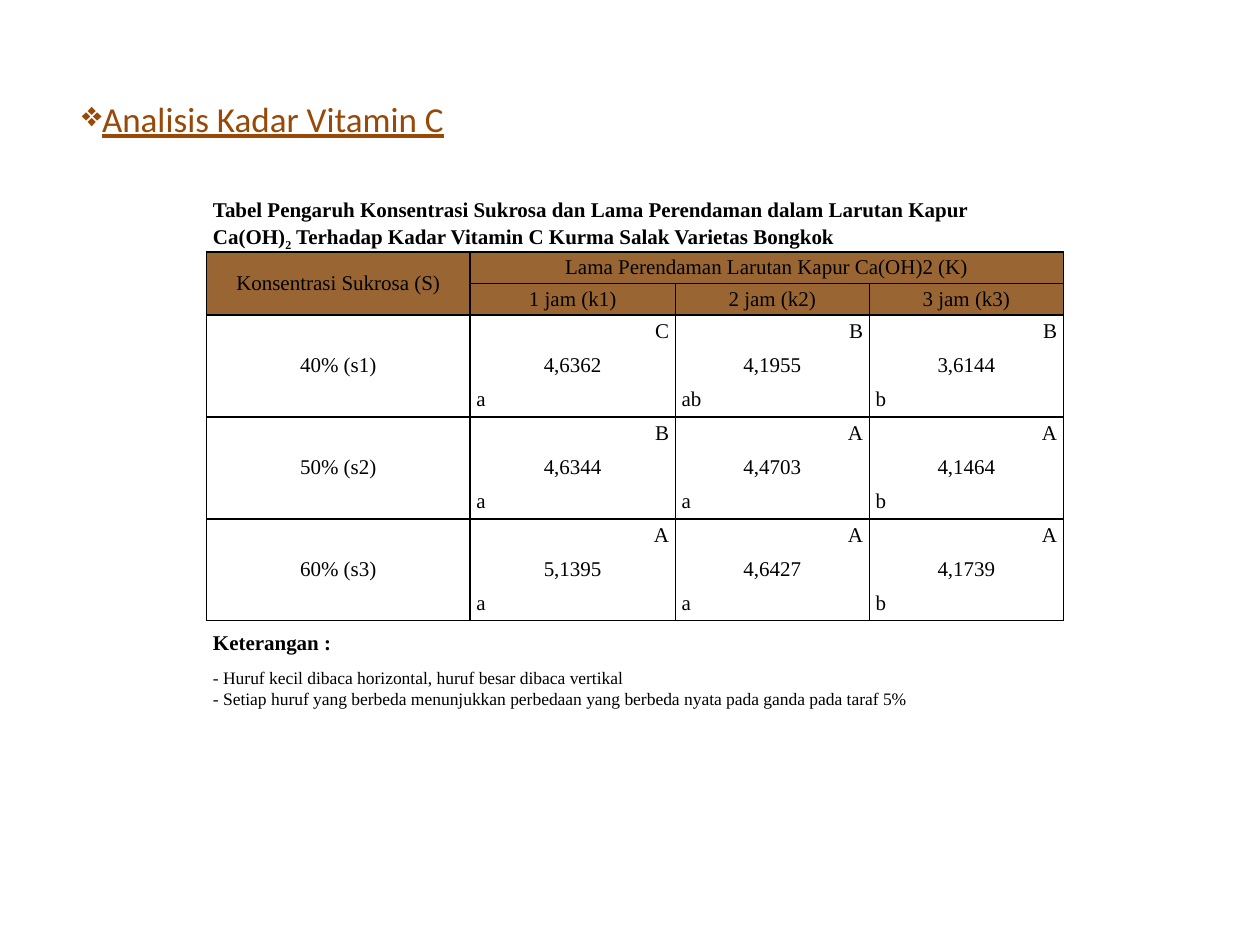
from lxml import etree
from pptx import Presentation
from pptx import util as u
from pptx.dml.color import RGBColor
from pptx.enum import text
from pptx.oxml import ns

COLORS = {"title": "984807", "text": "000000", "header": "996633", "line": "000000"}
SERIF = "Times New Roman"
LEFT, CENTER = text.PP_ALIGN.LEFT, text.PP_ALIGN.CENTER
RIGHT, JUSTIFY = text.PP_ALIGN.RIGHT, text.PP_ALIGN.JUSTIFY
MIDDLE, BOTTOM = text.MSO_ANCHOR.MIDDLE, text.MSO_ANCHOR.BOTTOM
COLUMN_WIDTHS = [2.09, 1.63, 1.54, 1.54]
ROW_HEIGHTS = [0.22] * 2 + [0.25] * 2 + [0.27] * 11 + [0.16]
HOURS = ["1 jam (k1)", "2 jam (k2)", "3 jam (k3)"]
GROUPS = [
    ("40% (s1)", "CBB", ["4,6362", "4,1955", "3,6144"], ["a", "ab", "b"]),
    ("50% (s2)", "BAA", ["4,6344", "4,4703", "4,1464"], ["a", "a", "b"]),
    ("60% (s3)", "AAA", ["5,1395", "4,6427", "4,1739"], ["a", "a", "b"]),
]
NOTES = [
    "- Huruf kecil dibaca horizontal, huruf besar dibaca vertikal",
    "- Setiap huruf yang berbeda menunjukkan perbedaan yang berbeda nyata pada ganda pada taraf 5%",
]


def write(para, words, size=12, font=SERIF, color="text", bold=False,
          underline=False, align=CENTER, baseline=0):
    para.alignment = align
    span = para.add_run()
    span.text = words
    span.font.size = u.Pt(size)
    span.font.name = font
    span.font.bold = bold
    span.font.underline = underline
    span.font.color.rgb = RGBColor.from_string(COLORS[color])
    if baseline:
        span.font._element.set("baseline", str(baseline * 1000))


def add_title(page):
    box = page.shapes.title
    box.left, box.top = u.Inches(0.55), u.Inches(0.63)
    box.width, box.height = u.Inches(8.5), u.Inches(0.62)
    box.text_frame.vertical_anchor = MIDDLE
    para = box.text_frame.paragraphs[0]
    write(para, "Analisis Kadar Vitamin C", size=20, font="Calibri",
          color="title", underline=True, align=LEFT)
    props = para._p.get_or_add_pPr()
    props.set("marL", "0")
    props.set("indent", "0")
    etree.SubElement(props, ns.qn("a:buChar"), char="❖")


def set_borders(cell, sides):
    props = cell._tc.get_or_add_tcPr()
    for side in "LRTB":
        line = etree.SubElement(props, ns.qn(f"a:ln{side}"), w=str(u.Pt(1)))
        if side in sides:
            fill = etree.SubElement(line, ns.qn("a:solidFill"))
            etree.SubElement(fill, ns.qn("a:srgbClr"), val=COLORS["line"])
        else:
            etree.SubElement(line, ns.qn("a:noFill"))


def style_cell(cell, sides="", fill=None, anchor=MIDDLE):
    cell.margin_left = cell.margin_right = u.Inches(0.05)
    cell.margin_top = cell.margin_bottom = 0
    cell.vertical_anchor = anchor
    set_borders(cell, sides)
    if fill:
        cell.fill.solid()
        cell.fill.fore_color.rgb = RGBColor.from_string(COLORS[fill])
    else:
        cell.fill.background()
    para = cell.text_frame.paragraphs[0]
    etree.SubElement(para._p, ns.qn("a:endParaRPr"), sz="1000")


def fill_cell(grid, row, col, words="", rows=1, cols=1, sides="", fill=None,
              anchor=MIDDLE, **style):
    cell = grid.cell(row, col)
    for r in range(row, row + rows):
        for c in range(col, col + cols):
            style_cell(grid.cell(r, c), sides, fill, anchor)
    if rows * cols > 1:
        cell.merge(grid.cell(row + rows - 1, col + cols - 1))
    para = cell.text_frame.paragraphs[0]
    if words:
        write(para, words, **style)
    return para


def add_grid(page):
    frame = page.shapes.add_table(
        len(ROW_HEIGHTS), len(COLUMN_WIDTHS), u.Inches(1.64), u.Inches(1.56),
        u.Inches(sum(COLUMN_WIDTHS)), u.Inches(sum(ROW_HEIGHTS)))
    grid = frame.table
    grid.first_row = grid.horz_banding = False
    for column, width in zip(grid.columns, COLUMN_WIDTHS):
        column.width = u.Inches(width)
    for row, height in zip(grid.rows, ROW_HEIGHTS):
        row.height = u.Inches(height)
    return grid


def fill_caption(grid):
    style = {"bold": True, "align": JUSTIFY}
    fill_cell(grid, 0, 0, "Tabel Pengaruh Konsentrasi Sukrosa dan Lama Perendaman "
              "dalam Larutan Kapur ", cols=4, **style)
    para = fill_cell(grid, 1, 0, "Ca(OH)", cols=4, sides="B", anchor=BOTTOM, **style)
    write(para, "2", baseline=-25, **style)
    write(para, " Terhadap Kadar Vitamin C Kurma Salak Varietas Bongkok", **style)


def fill_header(grid):
    style = {"sides": "LRTB", "fill": "header"}
    fill_cell(grid, 2, 0, "Konsentrasi Sukrosa (S)", rows=2, **style)
    fill_cell(grid, 2, 1, "Lama Perendaman Larutan Kapur Ca(OH)2 (K)", cols=3, **style)
    for col, hour in enumerate(HOURS, 1):
        fill_cell(grid, 3, col, hour, **style)


def fill_groups(grid):
    layout = [("LRT", RIGHT), ("LR", CENTER), ("LRB", JUSTIFY)]
    for index, (label, *lines) in enumerate(GROUPS):
        top = 4 + 3 * index
        fill_cell(grid, top, 0, label, rows=3, sides="LRTB")
        for row, (line, (sides, align)) in enumerate(zip(lines, layout), top):
            for col, words in enumerate(line, 1):
                fill_cell(grid, row, col, words, sides=sides, align=align)


def fill_notes(grid):
    fill_cell(grid, 13, 0, "Keterangan : ", cols=2, sides="T", anchor=BOTTOM,
              bold=True, align=JUSTIFY)
    for col in (2, 3):
        fill_cell(grid, 13, col, sides="T")
    for row, note in enumerate(NOTES, 14):
        fill_cell(grid, row, 0, note, cols=4, anchor=BOTTOM, size=10, align=JUSTIFY)


def main():
    deck = Presentation()
    deck.slide_width, deck.slide_height = u.Inches(10), u.Inches(7.5)
    page = deck.slides.add_slide(deck.slide_layouts[5])
    add_title(page)
    grid = add_grid(page)
    fill_caption(grid)
    fill_header(grid)
    fill_groups(grid)
    fill_notes(grid)
    deck.save("out.pptx")


if __name__ == "__main__":
    main()
